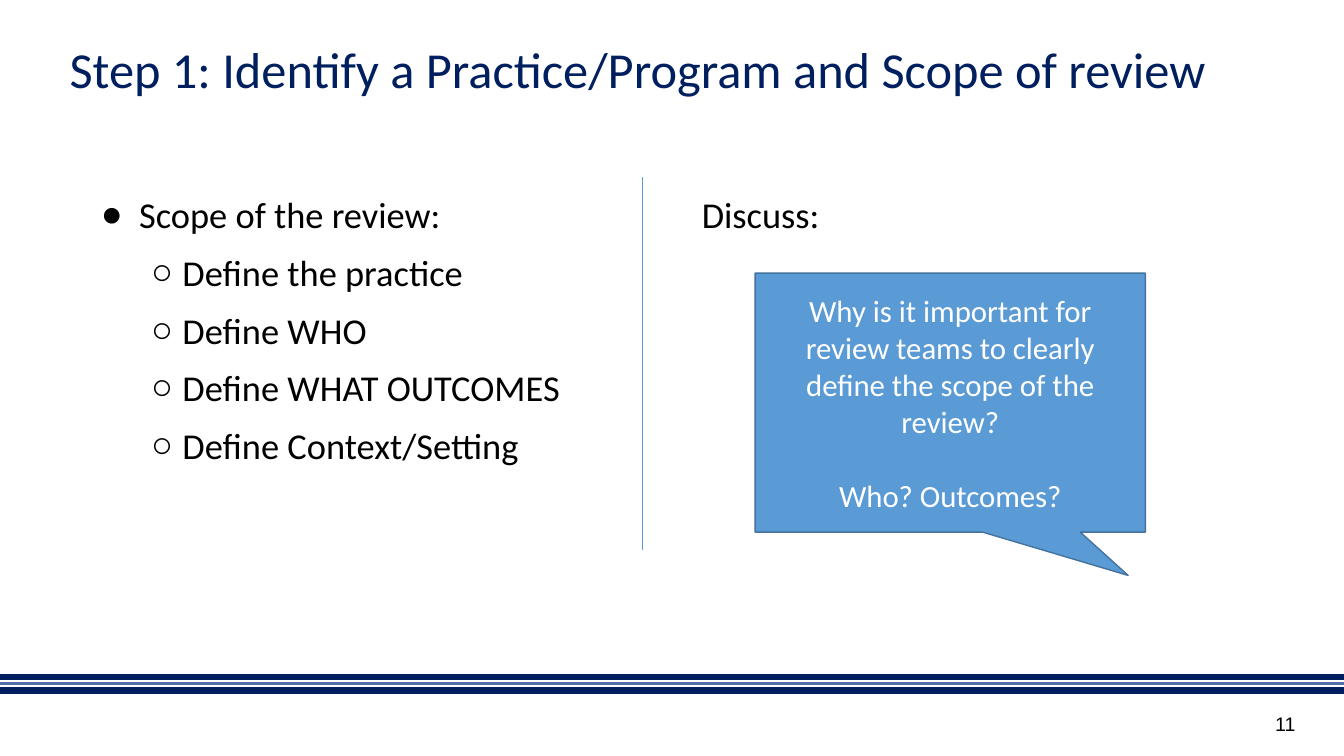
from lxml import etree
from pptx import Presentation
from pptx.dml.color import RGBColor
from pptx.enum.shapes import MSO_CONNECTOR, MSO_SHAPE
from pptx.enum.text import MSO_ANCHOR, MSO_AUTO_SIZE, PP_ALIGN
from pptx.oxml.ns import qn
from pptx.util import Emu, Pt

STRAIGHT = MSO_CONNECTOR.STRAIGHT
CALLOUT = MSO_SHAPE.RECTANGULAR_CALLOUT
TOP, MIDDLE = MSO_ANCHOR.TOP, MSO_ANCHOR.MIDDLE
LEFT, CENTER = PP_ALIGN.LEFT, PP_ALIGN.CENTER
NO_AUTOFIT = MSO_AUTO_SIZE.NONE

PX = 9144  # EMU in one px, 100 px to the inch
WIDTH, HEIGHT = 1333, 750
TWO_CONTENT = 3

NAVY, STEEL, BLUE, DARK_BLUE = "001F5F", "5070A7", "5B9BD5", "43739E"
BLACK, WHITE = "000000", "FFFFFF"


def px(length):
    return Emu(length * PX)


def color(value):
    return RGBColor.from_string(value)


def place(shape, box):
    shape.left, shape.top, shape.width, shape.height = map(px, box)


def prepare_frame(shape, anchor=TOP):
    frame = shape.text_frame
    frame.word_wrap = True
    frame.auto_size = NO_AUTOFIT
    frame.vertical_anchor = anchor
    frame.margin_left = frame.margin_right = px(10)
    frame.margin_top = frame.margin_bottom = px(5)
    return frame


def write(paragraph, text, size, fill=BLACK, font="Calibri", align=LEFT,
          before=0, spacing=1.0):
    paragraph.alignment = align
    paragraph.space_before = Pt(before)
    paragraph.space_after = Pt(0)
    paragraph.line_spacing = spacing
    run = paragraph.add_run()
    run.text = text
    run.font.name = font
    run.font.size = Pt(size)
    run.font.color.rgb = color(fill)


def set_bullet(paragraph, margin, indent=0, character=None):
    """Set the indents in px, and the bullet or none."""
    properties = paragraph._p.get_or_add_pPr()
    properties.set("marL", str(px(margin)))
    properties.set("indent", str(px(indent)))
    if character:
        etree.SubElement(properties, qn("a:buFont"), typeface="Arial")
        etree.SubElement(properties, qn("a:buChar"), char=character)
    else:
        etree.SubElement(properties, qn("a:buNone"))


def add_line(slide, start, end, stroke, weight):
    line = slide.shapes.add_connector(STRAIGHT, *map(px, start + end))
    line.line.color.rgb = color(stroke)
    line.line.width = Pt(weight)
    etree.SubElement(line._element.spPr, qn("a:effectLst"))


def add_title(slide, box):
    title = slide.shapes.title
    place(title, box)
    write(prepare_frame(title).paragraphs[0],
          "Step 1: Identify a Practice/Program and Scope of review",
          36, fill=NAVY, spacing=0.9)


def add_scope_list(slide, box):
    body = slide.placeholders[1]
    place(body, box)
    frame = prepare_frame(body)
    heading = frame.paragraphs[0]
    write(heading, "Scope of the review:", 26)
    set_bullet(heading, 38, -38, "●")
    for item in ("Define the practice", "Define WHO",
                 "Define WHAT OUTCOMES", "Define Context/Setting"):
        paragraph = frame.add_paragraph()
        paragraph.level = 1
        write(paragraph, item, 26, before=10)
        set_bullet(paragraph, 81, -31, "○")


def add_discussion(slide, box):
    body = slide.placeholders[2]
    place(body, box)
    heading = prepare_frame(body).paragraphs[0]
    write(heading, "Discuss:", 26)
    set_bullet(heading, 12)

    left, top = box[:2]
    callout = slide.shapes.add_shape(
        CALLOUT, *map(px, (left + 75, top + 85, 387, 257)))
    callout.adjustments[0] = 0.456
    callout.adjustments[1] = 0.667
    callout.shadow.inherit = False
    callout.fill.solid()
    callout.fill.fore_color.rgb = color(BLUE)
    callout.line.color.rgb = color(DARK_BLUE)
    callout.line.width = Pt(1)
    frame = prepare_frame(callout, MIDDLE)
    write(frame.paragraphs[0],
          "Why is it important for review teams to clearly define "
          "the scope of the review?", 22, fill=WHITE, align=CENTER)
    write(frame.add_paragraph(), "Who? Outcomes?", 22, fill=WHITE,
          align=CENTER, before=27)


def add_footer(slide, box):
    left, top, width, _ = box
    for offset, stroke, weight in ((0, NAVY, 4.5), (6, STEEL, 2.25),
                                   (13, NAVY, 4.5)):
        y = top + offset
        add_line(slide, (left, y), (left + width, y), stroke, weight)
    number = slide.shapes.add_textbox(
        *map(px, (left + width - 78, top + 29, 60, 34)))
    write(prepare_frame(number).paragraphs[0], "11", 14, font="Arial")


def main():
    presentation = Presentation()
    presentation.slide_width, presentation.slide_height = px(WIDTH), px(HEIGHT)
    slide = presentation.slides.add_slide(
        presentation.slide_layouts[TWO_CONTENT])
    add_title(slide, (59, 40, 1150, 93))
    add_scope_list(slide, (90, 186, 567, 476))
    add_line(slide, (637, 176), (637, 546), BLUE, 0.5)
    add_discussion(slide, (674, 186, 567, 476))
    add_footer(slide, (0, 672, WIDTH, 78))
    presentation.save("out.pptx")


if __name__ == "__main__":
    main()
